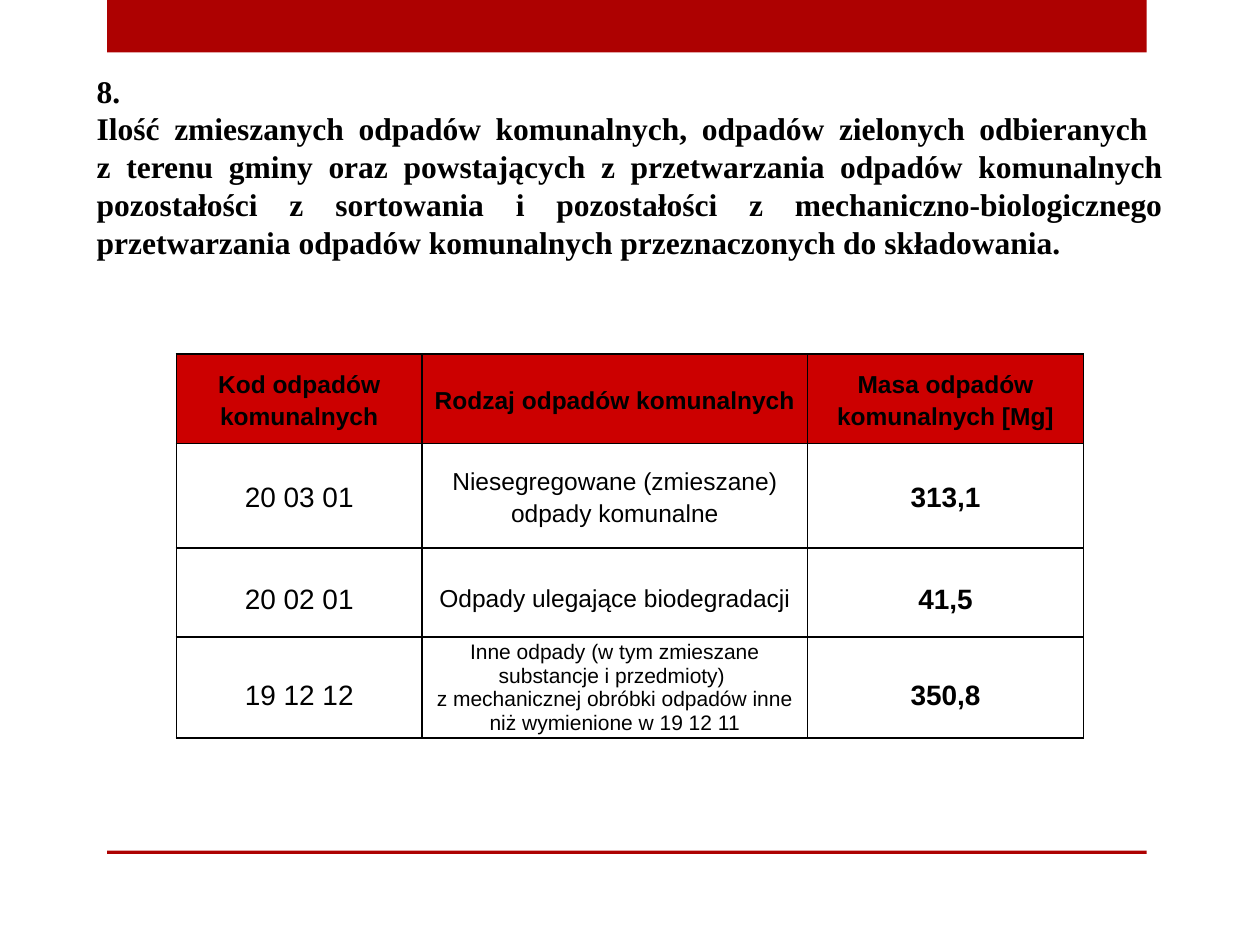
from copy import deepcopy
from dataclasses import dataclass
from pptx import Presentation
from pptx.dml.color import RGBColor as RGB
from pptx.enum.shapes import MSO_SHAPE as Shape
from pptx.enum.text import MSO_ANCHOR as Anchor, MSO_AUTO_SIZE as Auto, PP_ALIGN as Align
from pptx.oxml import parse_xml
from pptx.oxml.ns import nsdecls, qn
from pptx.util import Pt


@dataclass(frozen=True)
class Theme:
    bar: RGB = RGB(0xAD, 0x01, 0x01)
    head: RGB = RGB(0xCC, 0, 0)
    ink: RGB = RGB(0, 0, 0)
    serif: str = "Times New Roman"
    sans: str = "Arial"
    title: int = 18
    code: int = 16
    body: int = 14
    small: int = 12


T = Theme()
TITLE = [
    "8. ",
    "Ilość zmieszanych odpadów komunalnych, odpadów zielonych odbieranych \n"
    "z terenu gminy oraz powstających z przetwarzania odpadów komunalnych "
    "pozostałości z sortowania i pozostałości z mechaniczno-biologicznego "
    "przetwarzania odpadów komunalnych przeznaczonych do składowania.",
]
HEADS = ["Kod odpadów komunalnych", "Rodzaj odpadów komunalnych",
         "Masa odpadów komunalnych [Mg]"]
TIGHT = {"line_spacing": 1.15}
LOOSE = {"line_spacing": 1.5, "space_after": Pt(12)}
SMALL = {"space_after": Pt(12)}
WASTE = [
    ("20 03 01", "Niesegregowane (zmieszane) odpady komunalne", "313,1",
     T.body, TIGHT, TIGHT),
    ("20 02 01", "Odpady ulegające biodegradacji", "41,5", T.body, LOOSE, LOOSE),
    ("19 12 12", "Inne odpady (w tym zmieszane substancje i przedmioty) \n"
     "z mechanicznej obróbki odpadów inne niż wymienione w 19 12 11", "350,8",
     T.small, LOOSE, SMALL),
]
COLS = [140.4, 220.3, 157.7]
ROWS = [51, 59.8, 51, 52]


def apply(item, form):
    for key, val in form.items():
        setattr(item, key, val)


def write(para, text, size, face, bold, form):
    para.text = text
    apply(para, form)
    for run in para.runs:
        apply(run.font, {"size": Pt(size), "name": face, "bold": bold})
        run.font.color.rgb = T.ink
    for brk in para._p.findall(qn("a:br")):
        brk.append(deepcopy(para.runs[0]._r.rPr))


def add_bar(slide, top, high):
    bar = slide.shapes.add_shape(Shape.RECTANGLE, Pt(61.2), Pt(top), Pt(594), Pt(high))
    bar.shadow.inherit = False
    bar.fill.solid()
    bar.fill.fore_color.rgb = T.bar
    bar.line.fill.background()


def add_title(slide):
    frame = slide.shapes.add_textbox(Pt(48.2), Pt(37.4), Pt(623.5), Pt(116.6)).text_frame
    apply(frame, {"word_wrap": True, "auto_size": Auto.SHAPE_TO_FIT_TEXT})
    for num, text in enumerate(TITLE):
        para = frame.add_paragraph() if num else frame.paragraphs[0]
        write(para, text, T.title, T.serif, True, {"alignment": Align.JUSTIFY})


def add_edges(cell):
    props = cell._tc.get_or_add_tcPr()
    for num, side in enumerate("LRTB"):
        props.insert(num, parse_xml(
            f'<a:ln{side} {nsdecls("a")} w="{Pt(1)}"><a:solidFill>'
            f'<a:srgbClr val="{T.ink}"/></a:solidFill></a:ln{side}>'))


def fill_cell(cell, text, size, bold, form, fill=None):
    apply(cell, {"vertical_anchor": Anchor.MIDDLE, "margin_left": Pt(3.6),
                 "margin_right": Pt(3.6), "margin_top": 0, "margin_bottom": 0})
    write(cell.text_frame.paragraphs[0], text, size, T.sans, bold,
          {"alignment": Align.CENTER, **form})
    if fill:
        cell.fill.solid()
        cell.fill.fore_color.rgb = fill
    else:
        cell.fill.background()
    add_edges(cell)


def add_grid(slide):
    grid = slide.shapes.add_table(len(ROWS), len(COLS), Pt(100.8), Pt(202.3),
                                  Pt(sum(COLS)), Pt(sum(ROWS))).table
    apply(grid, {"first_row": False, "horz_banding": False})
    for col, wide in zip(grid.columns, COLS):
        col.width = Pt(wide)
    for row, high in zip(grid.rows, ROWS):
        row.height = Pt(high)
    for num, text in enumerate(HEADS):
        fill_cell(grid.cell(0, num), text, T.body, True, TIGHT, T.head)
    for num, (code, kind, mass, size, form, mid) in enumerate(WASTE, 1):
        fill_cell(grid.cell(num, 0), code, T.code, False, form)
        fill_cell(grid.cell(num, 1), kind, size, False, mid)
        fill_cell(grid.cell(num, 2), mass, T.code, True, form)


def main():
    deck = Presentation()
    apply(deck, {"slide_width": Pt(720), "slide_height": Pt(540)})
    slide = deck.slides.add_slide(deck.slide_layouts[6])
    add_bar(slide, 0, 30)
    add_bar(slide, 486, 2)
    add_title(slide)
    add_grid(slide)
    deck.save("out.pptx")


if __name__ == "__main__":
    main()
